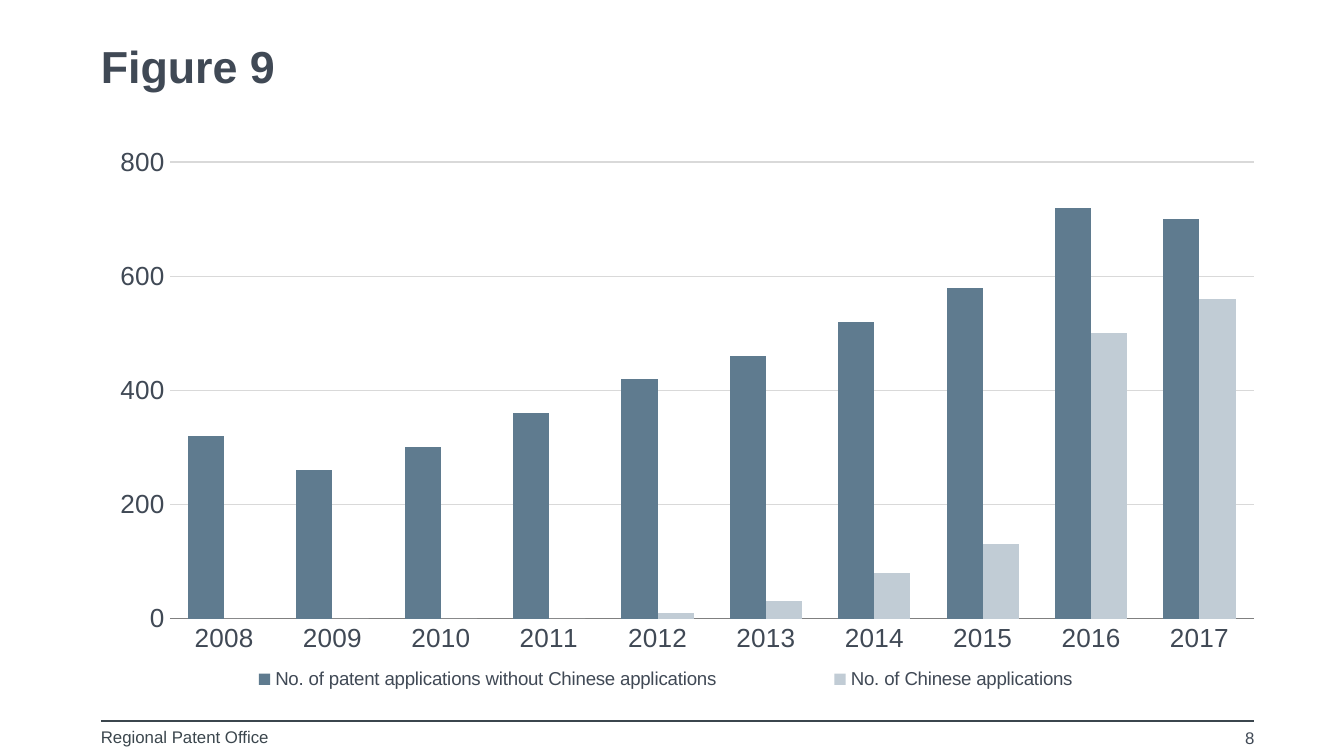
from lxml import etree
from pptx import Presentation, util as u
from pptx.chart.data import CategoryChartData
from pptx.dml.color import RGBColor
from pptx.enum import chart as charts, shapes, text
from pptx.oxml import parse_xml
from pptx.oxml.ns import nsdecls, qn

PX = 9525  # EMU per px, 96 px to the inch
FONT = "Arial"
COLORS = {
    "text": "404955",
    "footer": "3B464D",
    "axis": "808080",
    "grid": "D9D9D9",
    "others": "5F7B8F",
    "chinese": "C1CCD5",
}
YEARS = [str(year) for year in range(2008, 2018)]
SERIES = [
    ("No. of patent applications without Chinese applications", "others",
     (320, 260, 300, 360, 420, 460, 520, 580, 720, 700)),
    ("No. of Chinese applications", "chinese",
     (0, 0, 0, 0, 10, 30, 80, 130, 500, 560)),
]


def px(*lengths):
    return [u.Emu(length * PX) for length in lengths]


def color(name):
    return RGBColor.from_string(COLORS[name])


def style_font(font, size, name="text", bold=False):
    font.name = FONT
    font.size = u.Pt(size)
    font.bold = bold
    font.color.rgb = color(name)


def style_line(line, name):
    line.color.rgb = color(name)
    line.width = u.Pt(0.75)


def fill_frame(frame, words, align=text.PP_ALIGN.LEFT):
    """Put one paragraph in a frame without margins and return it."""
    frame.margin_left = frame.margin_top = 0
    frame.margin_right = frame.margin_bottom = 0
    frame.word_wrap = True
    frame.auto_size = text.MSO_AUTO_SIZE.NONE
    frame.vertical_anchor = text.MSO_ANCHOR.TOP
    para = frame.paragraphs[0]
    para.text = words
    para.alignment = align
    return para


def place_title(page, left, top, width, height):
    title = page.shapes.title
    title.left, title.top, title.width, title.height = px(left, top, width, height)
    para = fill_frame(title.text_frame, "Figure 9")
    para.line_spacing = u.Pt(28)
    style_font(para.font, 24, bold=True)


def set_layout(part, index, x, y, width, height, target=""):
    """Fix the place of a chart part, in fractions of the chart."""
    sizes = "".join(f'<c:{tag} val="{value}"/>' for tag, value in
                    (("x", x), ("y", y), ("w", width), ("h", height)))
    layout = parse_xml(
        f'<c:layout {nsdecls("c")}><c:manualLayout>{target}'
        f'<c:xMode val="edge"/><c:yMode val="edge"/>{sizes}'
        '</c:manualLayout></c:layout>')
    for old in part.findall(qn("c:layout")):
        part.remove(old)
    part.insert(index, layout)


def place_chart(page, left, top, width, height):
    data = CategoryChartData(number_format="General")
    data.categories = YEARS
    for name, _, values in SERIES:
        data.add_series(name, values)
    chart = page.shapes.add_chart(charts.XL_CHART_TYPE.COLUMN_CLUSTERED,
                                  *px(left, top, width, height), data).chart
    style_font(chart.font, 10)
    chart.has_title = False
    chart.has_legend = True
    chart.legend.position = charts.XL_LEGEND_POSITION.BOTTOM
    chart.legend.include_in_layout = False
    style_font(chart.legend.font, 10)

    plot = chart.plots[0]
    plot.gap_width = 100
    plot.overlap = 0
    plot.vary_by_categories = False
    for series, (_, fill, _) in zip(plot.series, SERIES):
        series.format.fill.solid()
        series.format.fill.fore_color.rgb = color(fill)
        series.invert_if_negative = False

    for axis in (chart.category_axis, chart.value_axis):
        axis.major_tick_mark = axis.minor_tick_mark = charts.XL_TICK_MARK.NONE
        style_font(axis.tick_labels.font, 14)
    style_line(chart.category_axis.format.line, "axis")
    values = chart.value_axis
    values.minimum_scale, values.maximum_scale, values.major_unit = 0, 800, 200
    values.tick_labels.number_format = "#,##0"
    values.tick_labels.number_format_is_linked = False
    values.format.line.fill.background()
    values.has_major_gridlines = True
    style_line(values.major_gridlines.format.line, "grid")

    area = chart.element.find(".//" + qn("c:plotArea"))
    set_layout(area, 0, 0.06, 0.03, 0.94, 0.83, '<c:layoutTarget val="inner"/>')
    legend = chart.element.find(".//" + qn("c:legend"))
    set_layout(legend, 1, 0.04, 0.94, 0.9, 0.06)


def place_footer(page, left, top, width):
    rule = page.shapes.add_connector(shapes.MSO_CONNECTOR.STRAIGHT,
                                     *px(left, top, left + width, top))
    style_line(rule.line, "footer")
    etree.SubElement(rule.element.spPr, qn("a:effectLst"))

    office = page.shapes.add_textbox(*px(left, top + 4, 163, 18))
    para = fill_frame(office.text_frame, "Regional Patent Office")
    style_font(para.font, 9, "footer")

    number_width = 224
    number = page.shapes.add_textbox(
        *px(left + width - number_width, top + 5, number_width, 17))
    para = fill_frame(number.text_frame, "8", text.PP_ALIGN.RIGHT)
    style_font(para.font, 9)


def main():
    deck = Presentation()
    deck.slide_width, deck.slide_height = px(960, 540)
    page = deck.slides.add_slide(deck.slide_layouts.get_by_name("Title Only"))
    left, width = 72, 824
    place_footer(page, left, 515, width)
    place_title(page, left, 29, width, 42)
    place_chart(page, left, 104, width, 393)
    deck.save("out.pptx")


if __name__ == "__main__":
    main()
